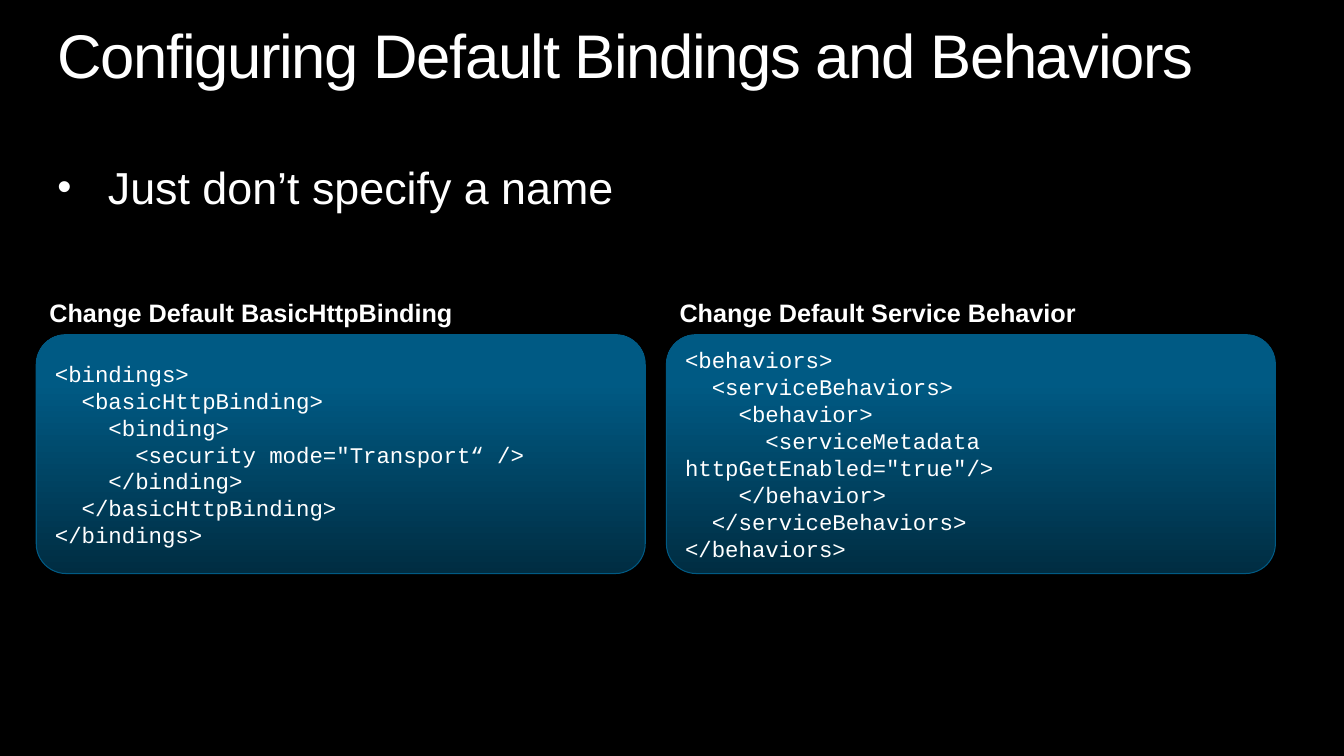
from lxml.etree import SubElement
from pptx import Presentation
from pptx.dml.color import RGBColor
from pptx.enum.shapes import MSO_SHAPE
from pptx.enum.text import MSO_ANCHOR, PP_ALIGN
from pptx.oxml.ns import qn
from pptx.util import Inches, Pt

COLORS = {"back": "000000", "text": "FFFFFF", "deep": "002D42", "blue": "005A84"}

BINDING = """<bindings>
  <basicHttpBinding>
    <binding>
      <security mode="Transport“ />
    </binding>
  </basicHttpBinding>
</bindings>"""

BEHAVIOR = """<behaviors>
  <serviceBehaviors>
    <behavior>
      <serviceMetadata httpGetEnabled="true"/>
    </behavior>
  </serviceBehaviors>
</behaviors>"""

PANELS = [("Change Default BasicHttpBinding", BINDING),
          ("Change Default Service Behavior", BEHAVIOR)]


def color(name):
    return RGBColor.from_string(COLORS[name])


def place(shape, left, top, width, height):
    shape.left, shape.top = Inches(left), Inches(top)
    shape.width, shape.height = Inches(width), Inches(height)


def trim(frame, wrap=True):
    """Remove the margins of a text frame and anchor it at the top."""
    frame.margin_left = frame.margin_right = 0
    frame.margin_top = frame.margin_bottom = 0
    frame.vertical_anchor = MSO_ANCHOR.TOP
    frame.word_wrap = wrap


def write(para, text, size, face="Arial", bold=False):
    para.alignment = PP_ALIGN.LEFT
    run = para.add_run()
    run.text = text
    font = run.font
    font.name, font.size, font.bold = face, Pt(size), bold
    font.color.rgb = color("text")
    return run


def add_box(slide, left, top, width, height, wrap=True):
    box = slide.shapes.add_textbox(0, 0, 0, 0)
    place(box, left, top, width, height)
    trim(box.text_frame, wrap)
    return box.text_frame.paragraphs[0]


def add_title(slide, text, left, top, width, height):
    title = slide.shapes.title
    place(title, left, top, width, height)
    trim(title.text_frame)
    para = title.text_frame.paragraphs[0]
    para.line_spacing = 0.9
    run = write(para, text, 44)
    run._r.get_or_add_rPr().set("spc", "-100")


def add_bullet(slide, text, left, top, width, height):
    para = add_box(slide, left, top, width, height)
    para.line_spacing = 0.9
    props = para._p.get_or_add_pPr()
    props.set("marL", str(Inches(0.5)))
    props.set("indent", str(-Inches(0.5)))
    SubElement(props, qn("a:buSzPct")).set("val", "90000")
    SubElement(props, qn("a:buFont")).set("typeface", "Arial")
    SubElement(props, qn("a:buChar")).set("char", "•")
    write(para, text, 32)


def add_panel(slide, label, code, left, top, width, height):
    """Draw a code panel with its label above it."""
    panel = slide.shapes.add_shape(MSO_SHAPE.ROUNDED_RECTANGLE, 0, 0, 0, 0)
    place(panel, left, top, width, height)
    panel.adjustments[0] = 0.125
    panel.shadow.inherit = False
    panel.line.color.rgb = color("blue")
    panel.line.width = Pt(0.75)
    panel.fill.gradient()
    panel.fill.gradient_angle = 90
    for stop, (name, spot) in zip(panel.fill.gradient_stops,
                                  [("deep", 0), ("blue", 0.8)]):
        stop.color.rgb = color(name)
        stop.position = spot

    frame = panel.text_frame
    frame.word_wrap = True
    frame.vertical_anchor = MSO_ANCHOR.MIDDLE
    for i, line in enumerate(code.splitlines()):
        para = frame.add_paragraph() if i else frame.paragraphs[0]
        write(para, line, 16, "Courier New")

    head = add_box(slide, left + 0.13, top - 0.37, 4, 0.3, wrap=False)
    write(head, label, 18, bold=True)


def main():
    deck = Presentation()
    deck.slide_width, deck.slide_height = Inches(13.33), Inches(7.5)
    slide = deck.slides.add_slide(deck.slide_layouts[5])
    slide.background.fill.solid()
    slide.background.fill.fore_color.rgb = color("back")

    add_title(slide, "Configuring Default Bindings and Behaviors",
              0.57, 0.25, 12.19, 0.67)
    add_bullet(slide, "Just don’t specify a name", 0.57, 1.64, 12.19, 2.1)
    for i, (label, code) in enumerate(PANELS):
        add_panel(slide, label, code, 0.36 + i * 6.25, 3.32, 6.04, 2.37)
    deck.save("out.pptx")


if __name__ == "__main__":
    main()
